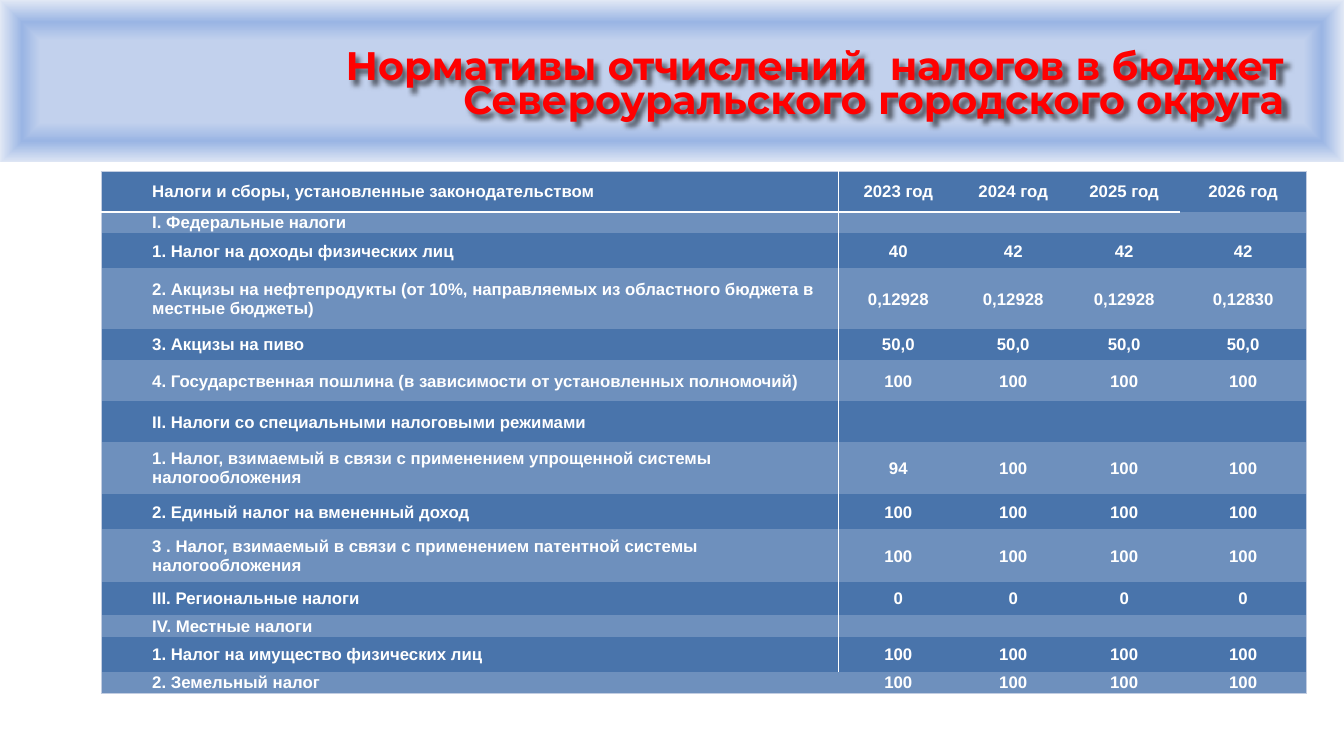
from lxml.etree import SubElement
from pptx import Presentation
from pptx.dml.color import RGBColor
from pptx.enum.shapes import MSO_CONNECTOR, MSO_SHAPE
from pptx.enum.text import MSO_ANCHOR, MSO_AUTO_SIZE, PP_ALIGN
from pptx.oxml import parse_xml
from pptx.oxml.ns import nsdecls, qn
from pptx.util import Inches, Pt

NO_STYLE = "{2D5ABB26-0587-4C30-8999-92F81FD0307C}"
DARK, LIGHT, FRAME, WHITE = "4974AB", "6E90BD", "C2CDE1", "FFFFFF"
BANNER_HEIGHT = Inches(1.62)


def write(frame, text, size, font, color, align=PP_ALIGN.LEFT, spacing=None):
    """Put bold text in the first paragraph of a frame and format it."""
    para = frame.paragraphs[0]
    para.alignment = align
    para.line_spacing = spacing
    if not text:
        para.font.size = Pt(size)
        return para
    span = para.add_run()
    span.text = text
    span.font.size, span.font.name, span.font.bold = Pt(size), font, True
    span.font.color.rgb = RGBColor.from_string(color)
    return para


def add_border(cell, side, color, width):
    properties = cell._tc.get_or_add_tcPr()
    line = SubElement(properties, qn(f"a:ln{side}"), w=str(Pt(width)))
    fill = SubElement(line, qn("a:solidFill"))
    SubElement(fill, qn("a:srgbClr"), val=color)


deck = Presentation()
deck.slide_width, deck.slide_height = Inches(13.33), Inches(7.5)
page = deck.slides.add_slide(deck.slide_layouts[5])

# Banner with a gradient running from its centre to its edges
banner = page.shapes.add_shape(MSO_SHAPE.RECTANGLE, 0, 0, deck.slide_width, BANNER_HEIGHT)
banner.shadow.inherit = False
banner.line.fill.background()
stops = "".join(
    f'<a:gs pos="{share * 1000}"><a:srgbClr val="{color}"/></a:gs>'
    for share, color in [(50, "C2D1ED"), (73, "9AB5E4"), (100, "E1E8F5")]
)
gradient = parse_xml(
    f'<a:gradFill {nsdecls("a")} rotWithShape="1"><a:gsLst>{stops}</a:gsLst>'
    '<a:path path="shape"><a:fillToRect l="50000" t="50000" r="50000" b="50000"/>'
    "</a:path></a:gradFill>"
)
banner._element.spPr.find(qn("a:prstGeom")).addnext(gradient)

# White rule under the banner
rule = page.shapes.add_connector(
    MSO_CONNECTOR.STRAIGHT, 0, BANNER_HEIGHT, deck.slide_width, BANNER_HEIGHT
)
rule.line.color.rgb = RGBColor.from_string(WHITE)
rule.line.width = Pt(2)
SubElement(rule._element.spPr, qn("a:effectLst"))

# Table contents: row height, label, values by year
rows = [
    (0.40, "Налоги и сборы, установленные законодательством",
     ["2023 год", "2024 год", "2025 год", "2026 год"]),
    (0.18, "I. Федеральные налоги", [""] * 4),
    (0.35, "1. Налог на доходы физических лиц", ["40", "42", "42", "42"]),
    (0.60, "2. Акцизы на нефтепродукты (от 10%, направляемых из областного "
           "бюджета в местные бюджеты)",
     ["0,12928", "0,12928", "0,12928", "0,12830"]),
    (0.31, "3. Акцизы на пиво", ["50,0"] * 4),
    (0.41, "4. Государственная пошлина (в зависимости от установленных полномочий)",
     ["100"] * 4),
    (0.40, "II. Налоги со специальными налоговыми режимами", [""] * 4),
    (0.52, "1. Налог, взимаемый в связи с применением упрощенной системы "
           "налогообложения", ["94", "100", "100", "100"]),
    (0.35, "2. Единый налог на вмененный доход", ["100"] * 4),
    (0.52, "3 . Налог, взимаемый в связи с применением патентной системы "
           "налогообложения", ["100"] * 4),
    (0.33, "III. Региональные налоги", ["0"] * 4),
    (0.21, "IV. Местные налоги", [""] * 4),
    (0.35, "1. Налог на имущество физических лиц", ["100"] * 4),
    (0.21, "2. Земельный налог", ["100"] * 4),
]
widths = [7.32, 1.18, 1.10, 1.10, 1.26]
last_row, last_column = len(rows) - 1, len(widths) - 1

# Table
holder = page.shapes.add_table(
    len(rows), len(widths), Inches(1), Inches(1.7),
    Inches(sum(widths)), Inches(sum(height for height, _, _ in rows)),
)
table = holder.table
table.first_row = table.horz_banding = False
table._tbl.tblPr.find(qn("a:tableStyleId")).text = NO_STYLE
for column, width in zip(table.columns, widths):
    column.width = Inches(width)

for r, (height, label, values) in enumerate(rows):
    table.rows[r].height = Inches(height)
    for c, text in enumerate([label, *values]):
        cell = table.cell(r, c)
        cell.vertical_anchor = MSO_ANCHOR.MIDDLE
        cell.margin_left = cell.margin_right = cell.margin_top = Inches(0.01)
        cell.margin_bottom = 0
        align = PP_ALIGN.CENTER if c else PP_ALIGN.LEFT
        para = write(cell.text_frame, text, 12, "Arial", WHITE, align)
        if c == 0:
            para.level = 1
            para._p.get_or_add_pPr().set("marL", str(Inches(0.5)))
            add_border(cell, "L", FRAME, 0.5)
            if r < last_row:
                add_border(cell, "R", WHITE, 1)
        if c == last_column:
            add_border(cell, "R", FRAME, 0.5)
        if r == 0:
            add_border(cell, "T", FRAME, 0.5)
            if c < last_column:
                add_border(cell, "B", WHITE, 1.5)
        if r == last_row:
            add_border(cell, "B", FRAME, 0.5)
        cell.fill.solid()
        cell.fill.fore_color.rgb = RGBColor.from_string(LIGHT if r % 2 else DARK)

# Title, brought in front of the banner
title = page.shapes.title
title.left, title.top = Inches(2.65), Inches(0.16)
title.width, title.height = Inches(10.19), Inches(1.09)
frame = title.text_frame
frame.word_wrap = True
frame.auto_size = MSO_AUTO_SIZE.NONE
frame.vertical_anchor = MSO_ANCHOR.BOTTOM
write(frame, "Нормативы отчислений  налогов в бюджет Североуральского городского округа",
      28.4, "Montserrat", "FF0000", PP_ALIGN.RIGHT, 0.7)
title._element.spPr.append(parse_xml(
    f'<a:effectLst {nsdecls("a")}><a:outerShdw blurRad="50800" dist="54000" dir="2700000">'
    '<a:srgbClr val="000000"><a:alpha val="60000"/></a:srgbClr></a:outerShdw></a:effectLst>'
))
page.shapes._spTree.append(title._element)

deck.save("out.pptx")
